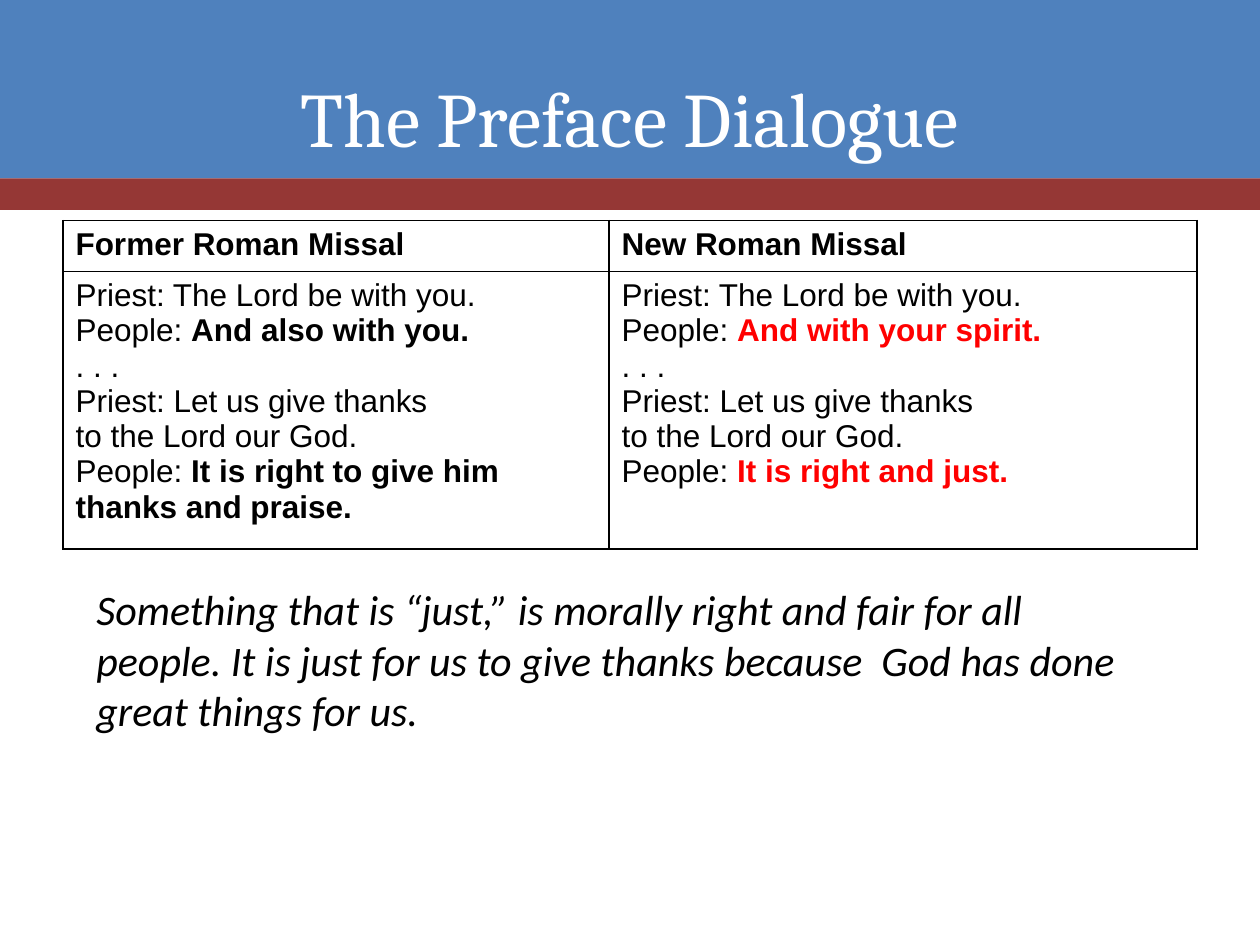
from pptx import Presentation
from pptx.dml.color import RGBColor
from pptx.enum.shapes import MSO_SHAPE as Shape
from pptx.enum.text import MSO_ANCHOR as Anchor, PP_ALIGN as Align
from pptx.oxml import parse_xml
from pptx.oxml.ns import nsdecls
from pptx.util import Pt

COLORS = {"blue": "4F81BD", "maroon": "953735", "white": "FFFFFF",
          "black": "000000", "red": "FF0000"}
WIDTH, HEIGHT = 720, 540


class SlideBuilder:
    """Holds the style and the current page, and draws each kind of element."""

    def __init__(self, deck):
        self.page = deck.slides.add_slide(deck.slide_layouts[6])
        self.table_style = {"name": "Arial", "size": Pt(18)}

    def color(self, name):
        return RGBColor.from_string(COLORS[name])

    def band(self, top, height, fill):
        shape = self.page.shapes.add_shape(
            Shape.RECTANGLE, 0, Pt(top), Pt(WIDTH), Pt(height))
        shape.shadow.inherit = False
        shape.fill.solid()
        shape.fill.fore_color.rgb = self.color(fill)
        shape.line.fill.background()

    def span(self, para, text, color, style):
        for index, line in enumerate(text.split("\n")):
            if index:
                para.add_line_break()
            if line:
                span = para.add_run()
                span.text = line
                span.font.color.rgb = self.color(color)
                for key, value in style.items():
                    setattr(span.font, key, value)

    def text(self, frame, text, color, style, align=Align.LEFT, anchor=Anchor.TOP):
        box = self.page.shapes.add_textbox(*map(Pt, frame))
        box.text_frame.word_wrap = True
        box.text_frame.vertical_anchor = anchor
        para = box.text_frame.paragraphs[0]
        para.alignment = align
        self.span(para, text, color, style)

    def border(self, cell):
        props = cell._tc.get_or_add_tcPr()
        for index, side in enumerate(("lnL", "lnR", "lnT", "lnB")):
            props.insert(index, parse_xml(
                f'<a:{side} {nsdecls("a")} w="{Pt(1)}"><a:solidFill>'
                f'<a:srgbClr val="{COLORS["black"]}"/></a:solidFill></a:{side}>'))

    def table(self, left, top, widths, heights, rows):
        frame = (left, top, sum(widths), sum(heights))
        table = self.page.shapes.add_table(
            len(heights), len(widths), *map(Pt, frame)).table
        for column, width in zip(table.columns, widths):
            column.width = Pt(width)
        for row, height, contents in zip(table.rows, heights, rows):
            row.height = Pt(height)
            for cell, spans in zip(row.cells, contents):
                cell.fill.solid()
                cell.fill.fore_color.rgb = self.color("white")
                self.border(cell)
                for text, bold, color in spans:
                    self.span(cell.text_frame.paragraphs[0], text, color,
                              self.table_style | {"bold": bold})


def dialogue(greeting_reply, thanks_reply, color):
    return [("Priest: The Lord be with you.\nPeople: ", False, "black"),
            (greeting_reply + "\n", True, color),
            (". . .\nPriest: Let us give thanks\nto the Lord our God.\nPeople: ",
             False, "black"),
            (thanks_reply, True, color)]


def main():
    deck = Presentation()
    deck.slide_width, deck.slide_height = Pt(WIDTH), Pt(HEIGHT)
    slide = SlideBuilder(deck)
    slide.band(0, 102, "blue")
    slide.band(102, 18, "maroon")
    slide.text((36, 21.6, 648, 90), "The Preface Dialogue", "white",
               {"name": "Cambria", "size": Pt(44)}, Align.CENTER, Anchor.MIDDLE)
    headings = [[(f"{edition} Roman Missal", True, "black")]
                for edition in ("Former", "New")]
    replies = [
        dialogue("And also with you.",
                 "It is right to give him thanks and praise.", "black"),
        dialogue("And with your spirit.", "It is right and just.", "red")]
    slide.table(36, 126, (312, 336), (29.2, 158.4), (headings, replies))
    slide.text((48, 330, 618, 94),
               "Something that is “just,” is morally right and fair for all people. "
               "It is just for us to give thanks because  God has done great things "
               "for us.", "black",
               {"name": "Calibri", "size": Pt(24), "italic": True})
    deck.save("out.pptx")


if __name__ == "__main__":
    main()
